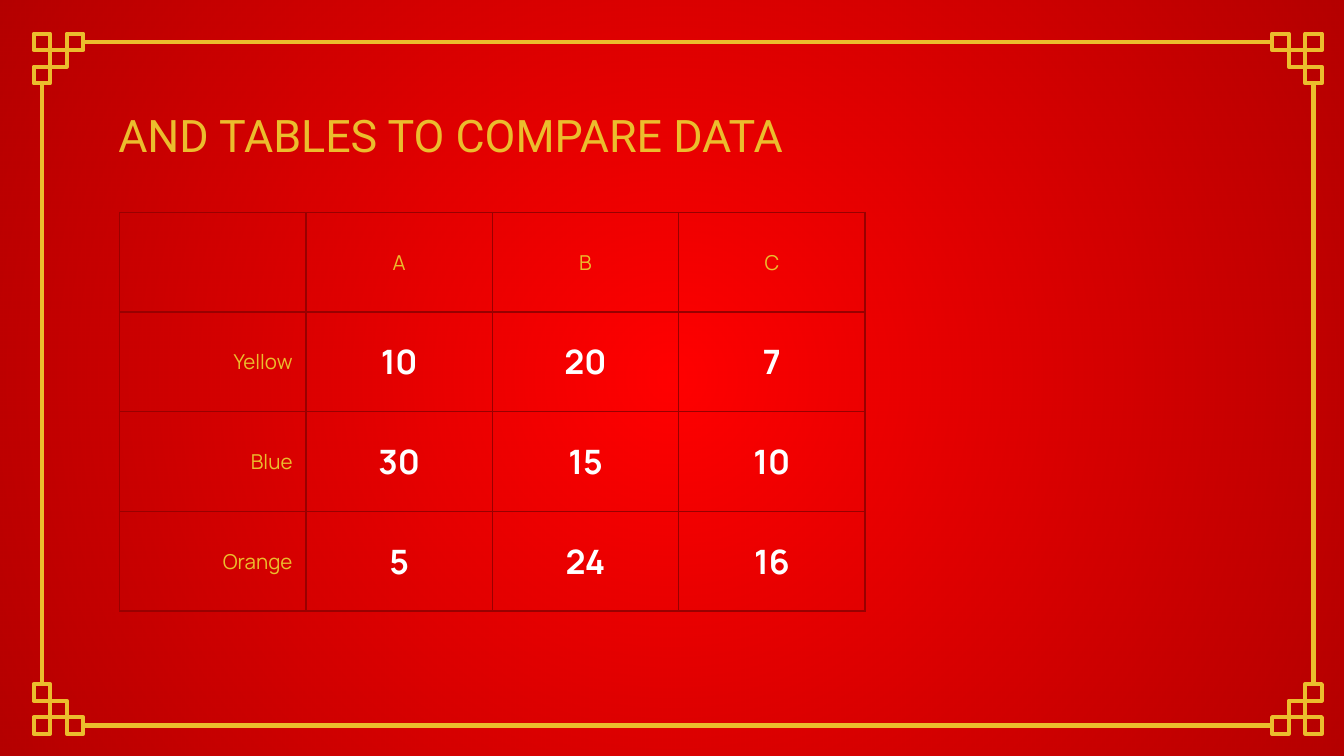
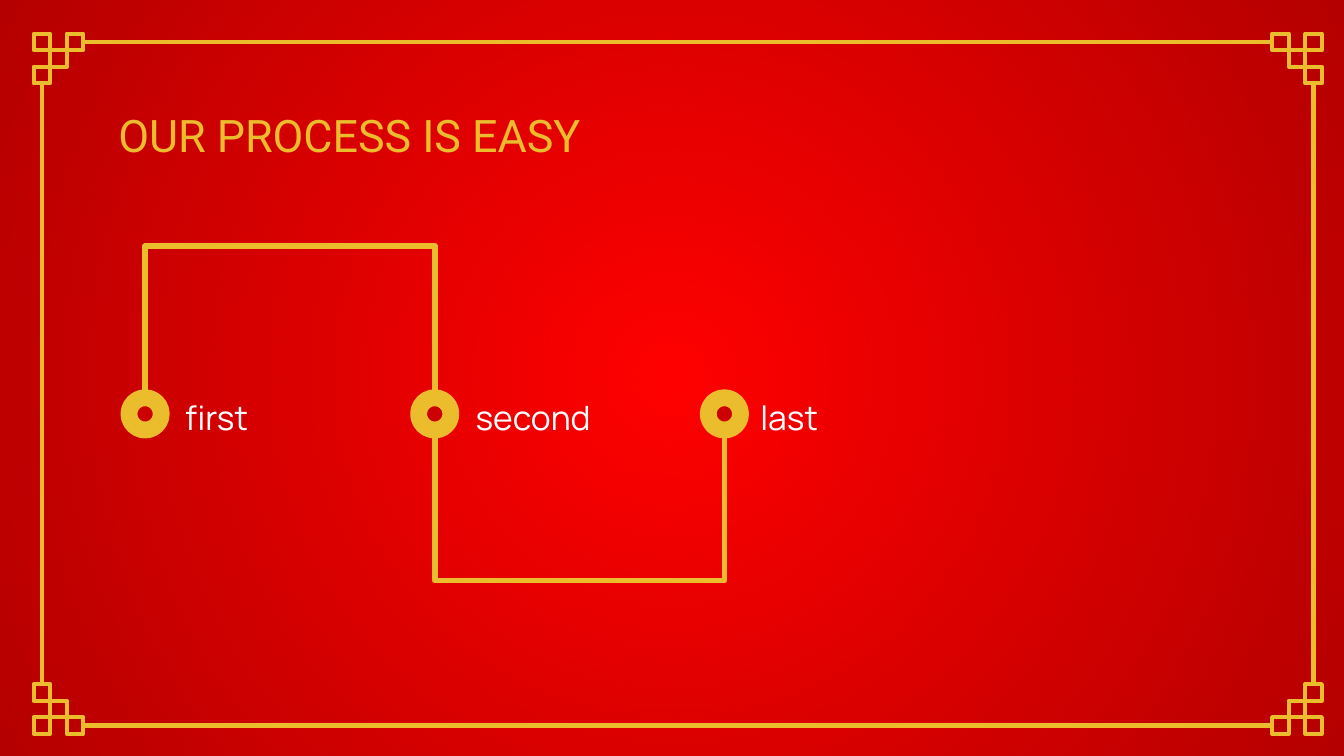
import itertools

import pptx
import pptx.dml.color
import pptx.enum.shapes
import pptx.enum.text
import pptx.oxml
import pptx.oxml.ns
import pptx.util

COLORS = {"red": "FF0000", "dark red": "CC0000", "grid": "990000",
          "gold": "EBBD2D", "white": "FFFFFF", "black": "000000"}
TITLE_FONT, BODY_FONT = "Roboto", "Manrope"
WIDTH, HEIGHT = 10, 5.625
FRAME = {"left": 0.25, "top": 0.25, "right": 9.835, "bottom": 5.46}
TILE = 0.37 / 3
CORNER_TILES = [(0, 0), (2, 0), (1, 1), (0, 2)]
TITLE_BOX = (0.78, 0.81, 6.01, 0.49)
SHAPES = pptx.enum.shapes.MSO_SHAPE
ALIGN = pptx.enum.text.PP_ALIGN
ANCHOR = pptx.enum.text.MSO_ANCHOR


def inches(*lengths):
    return [pptx.util.Inches(length) for length in lengths]


def color(name):
    return pptx.dml.color.RGBColor.from_string(COLORS[name])


def write(frame, text, size=18, font=BODY_FONT, ink="white", bold=False,
          align=ALIGN.LEFT, anchor=ANCHOR.TOP):
    """Fill a text frame with one formatted paragraph."""
    frame.word_wrap = True
    frame.auto_size = pptx.enum.text.MSO_AUTO_SIZE.NONE
    frame.vertical_anchor = anchor
    frame.margin_left, frame.margin_top, frame.margin_right, frame.margin_bottom = \
        inches(0.1, 0.1, 0.1, 0.1)
    format_paragraph(frame.paragraphs[0], text, size, font, ink, bold, align)


def format_paragraph(para, text, size, font, ink, bold, align):
    para.alignment = align
    span = para.add_run()
    span.text = text
    span.font.size = pptx.util.Pt(size)
    span.font.name = font
    span.font.bold = bold
    span.font.color.rgb = color(ink)


def style(shape, fill=None, line=None, weight=2.25):
    """Give a shape its fill and outline, without a shadow."""
    shape.shadow.inherit = False
    if fill:
        shape.fill.solid()
        shape.fill.fore_color.rgb = color(fill)
    else:
        shape.fill.background()
    if line:
        shape.line.color.rgb = color(line)
        shape.line.width = pptx.util.Pt(weight)
    else:
        shape.line.fill.background()
    return shape


def add_vignette(page):
    veil = style(page.shapes.add_shape(SHAPES.RECTANGLE, *inches(0, 0, WIDTH, HEIGHT)))
    stops = "".join(
        f'<a:gs pos="{place}"><a:srgbClr val="{COLORS["black"]}">'
        f'<a:alpha val="{alpha}"/></a:srgbClr></a:gs>'
        for place, alpha in [(0, 0), (100000, 30000)])
    gradient = pptx.oxml.parse_xml(
        f'<a:gradFill {pptx.oxml.ns.nsdecls("a")} rotWithShape="1"><a:gsLst>{stops}</a:gsLst>'
        '<a:path path="circle"><a:fillToRect l="50000" t="50000" r="50000" b="50000"/>'
        '</a:path></a:gradFill>')
    empty_fill = veil._element.spPr.find(pptx.oxml.ns.qn("a:noFill"))
    veil._element.spPr.replace(empty_fill, gradient)
    return veil


def add_corner(page, side, edge):
    """Draw four tiles, mirrored into the corner, keyed by column and row."""
    tiles = {}
    for column, row in CORNER_TILES:
        left = FRAME["left"] + column * TILE if side == "left" \
            else FRAME["right"] - (column + 1) * TILE
        top = FRAME["top"] + row * TILE if edge == "top" \
            else FRAME["bottom"] - (row + 1) * TILE
        tile = page.shapes.add_shape(SHAPES.RECTANGLE, *inches(left, top, TILE, TILE))
        tiles[column, row] = style(tile, line="gold")
    return tiles


def join(page, start, start_site, end, end_site):
    link = page.shapes.add_connector(pptx.enum.shapes.MSO_CONNECTOR.STRAIGHT, 0, 0, 0, 0)
    link.begin_connect(start, start_site)
    link.end_connect(end, end_site)
    link.line.color.rgb = color("gold")
    link.line.width = pptx.util.Pt(2.25)
    link._element.spPr.append(pptx.oxml.parse_xml(
        f'<a:effectLst {pptx.oxml.ns.nsdecls("a")}/>'))
    return link


def decorate_layout(layout, page):
    """Draw background and frame on a page, then hand them to its layout."""
    layout.background.fill.solid()
    layout.background.fill.fore_color.rgb = color("red")
    for holder in list(layout.placeholders):
        if holder.placeholder_format.idx != 0:
            holder._element.getparent().remove(holder._element)

    parts = [add_vignette(page)]
    corners = {key: add_corner(page, *key)
               for key in itertools.product(("left", "right"), ("top", "bottom"))}
    for tiles in corners.values():
        parts.extend(tiles.values())
    for edge in ("top", "bottom"):
        parts.append(join(page, corners["left", edge][2, 0], 3,
                          corners["right", edge][2, 0], 1))
    for side in ("left", "right"):
        parts.append(join(page, corners[side, "top"][0, 2], 2,
                          corners[side, "bottom"][0, 2], 0))
    for part in parts:
        layout.shapes._spTree.append(part._element)
    renumber(layout)


def renumber(layout):
    """Keep shape ids unique and connector ends pointing at their tiles."""
    tree = layout.shapes._spTree
    title = layout.placeholders[0]._element
    title.xpath(".//p:cNvPr")[0].set("id", "900")


def set_title(page, text):
    title = page.shapes.title
    title.left, title.top, title.width, title.height = inches(*TITLE_BOX)
    write(title.text_frame, text, size=24, font=TITLE_FONT, ink="gold",
          anchor=ANCHOR.BOTTOM)


def set_borders(cell):
    properties = cell._tc.get_or_add_tcPr()
    for index, side in enumerate(("lnL", "lnR", "lnT", "lnB")):
        properties.insert(index, pptx.oxml.parse_xml(
            f'<a:{side} {pptx.oxml.ns.nsdecls("a")} w="9525"><a:solidFill>'
            f'<a:srgbClr val="{COLORS["grid"]}"/></a:solidFill></a:{side}>'))


def add_data_table(page, rows, left, top, column_width, row_height):
    row_count, column_count = len(rows), len(rows[0])
    table = page.shapes.add_table(row_count, column_count, *inches(
        left, top, column_count * column_width, row_count * row_height)).table
    table.first_row = table.horz_banding = False
    for row, column in itertools.product(range(row_count), range(column_count)):
        cell = table.cell(row, column)
        cell.fill.background()
        cell.vertical_anchor = ANCHOR.MIDDLE
        cell.margin_left, cell.margin_right, cell.margin_top, cell.margin_bottom = \
            inches(0.1, 0.1, 0.07, 0.07)
        set_borders(cell)
        heading = row == 0 or column == 0
        if rows[row][column]:
            format_paragraph(cell.text_frame.paragraphs[0], rows[row][column],
                             size=11 if heading else 18, font=BODY_FONT,
                             ink="gold" if heading else "white", bold=not heading,
                             align=ALIGN.RIGHT if column == 0 else ALIGN.CENTER)


def add_route(page, points):
    builder = page.shapes.build_freeform(*inches(*points[0]))
    builder.add_line_segments([inches(*point) for point in points[1:]], close=False)
    style(builder.convert_to_shape(), line="gold", weight=3)


def add_step(page, text, center, middle, label_left, label_width, size=0.24):
    ring = page.shapes.add_shape(SHAPES.OVAL, *inches(
        center - size / 2, middle - size / 2, size, size))
    style(ring, fill="dark red", line="gold", weight=9)
    box = page.shapes.add_textbox(*inches(label_left, 2.85, label_width, 0.45))
    write(box.text_frame, text)


def build_table_page(page):
    set_title(page, "AND TABLES TO COMPARE DATA")
    add_data_table(page, [["", "A", "B", "C"],
                          ["Yellow", "10", "20", "7"],
                          ["Blue", "30", "15", "10"],
                          ["Orange", "5", "24", "16"]],
                   left=0.89, top=1.58, column_width=1.387, row_height=0.742)


def build_process_page(page):
    set_title(page, "OUR PROCESS IS EASY")
    first, second, last = centers = [1.08 + 2.155 * step for step in range(3)]
    start, high, low = 3.05, 1.83, 4.32
    add_route(page, [(first, start), (first, high), (second, high),
                     (second, low), (last, low), (last, start)])
    labels = [("first", 1.28, 1.29), ("second", 3.44, 1.29), ("last", 5.56, 1.17)]
    for center, (text, left, width) in zip(centers, labels):
        add_step(page, text, center, 3.08, left, width)


def main():
    deck = pptx.Presentation()
    deck.slide_width, deck.slide_height = inches(WIDTH, HEIGHT)
    layout = deck.slide_layouts.get_by_name("Title Only")
    table_page, process_page = [deck.slides.add_slide(layout) for _ in range(2)]
    decorate_layout(layout, table_page)
    build_table_page(table_page)
    build_process_page(process_page)
    deck.save("out.pptx")


if __name__ == "__main__":
    main()
